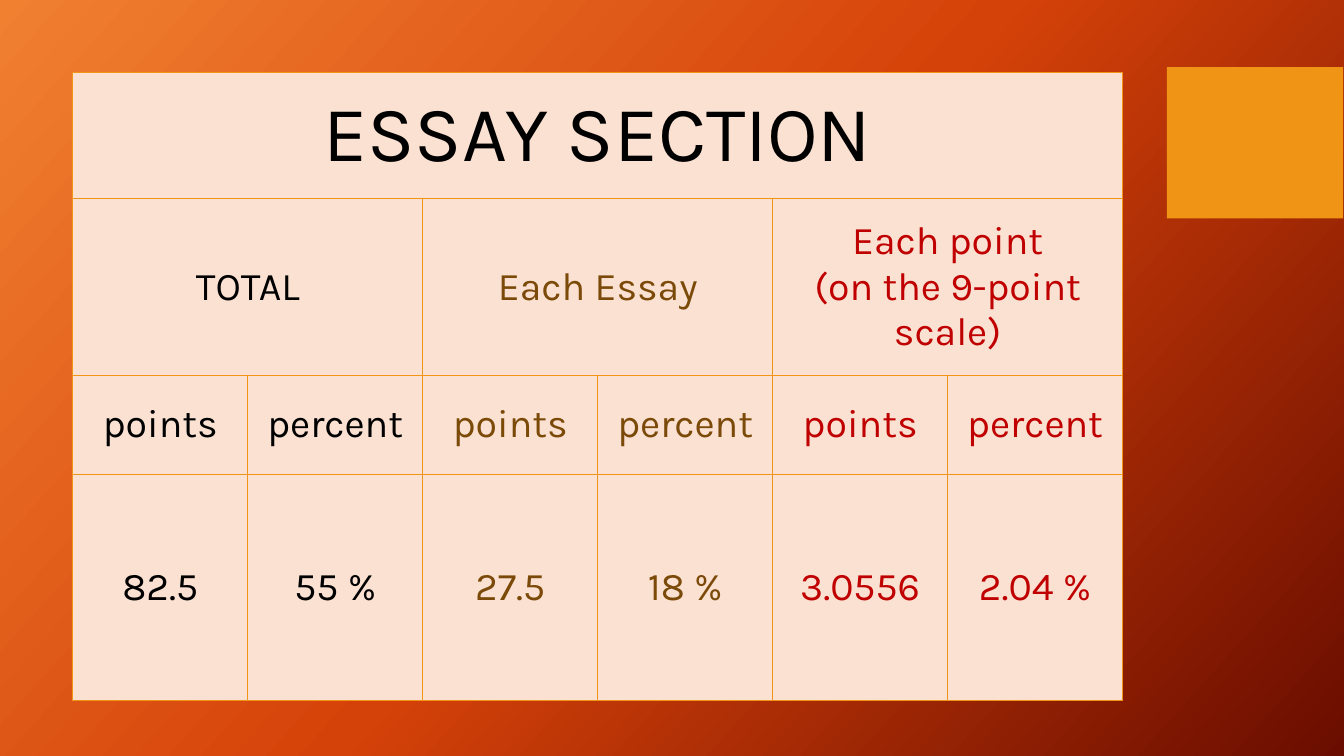
from copy import deepcopy

from lxml import etree
from pptx import Presentation
from pptx.dml.color import RGBColor
from pptx.enum import shapes, text
from pptx.oxml import ns
from pptx.util import Pt

BLACK = RGBColor(0x00, 0x00, 0x00)
BROWN = RGBColor(0x7B, 0x4A, 0x08)
RED = RGBColor(0xC0, 0x00, 0x00)
AMBER = RGBColor(0xF0, 0x94, 0x15)
CREAM = RGBColor(0xFA, 0xE1, 0xD2)
BACKGROUND_STOPS = [
    (0, RGBColor(0xF1, 0x80, 0x31)),
    (0.5, RGBColor(0xD5, 0x42, 0x09)),
    (1, RGBColor(0x6A, 0x0D, 0x00)),
]

FONT = "Karla"
ROW_HEIGHTS = [90, 126, 70.8, 161.3]
COLUMN_WIDTH = 125
GROUPS = [
    ("TOTAL", BLACK, "82.5", "55 %"),
    ("Each Essay", BROWN, "27.5", "18 %"),
    ("Each point\n(on the 9-point scale)", RED, "3.0556", "2.04 %"),
]


def paint_background(slide):
    """Fill the slide with a diagonal three-colour gradient."""
    fill = slide.background.fill
    fill.gradient()
    fill.gradient_angle = 318
    first_stop = slide.element.xpath(".//a:gs")[0]
    first_stop.addnext(deepcopy(first_stop))
    for stop, (position, color) in zip(fill.gradient_stops, BACKGROUND_STOPS):
        stop.position = position
        stop.color.rgb = color


def add_block(slide, left, top, width, height):
    """Add a plain amber rectangle."""
    shape = slide.shapes.add_shape(
        shapes.MSO_SHAPE.RECTANGLE, Pt(left), Pt(top), Pt(width), Pt(height)
    )
    shape.shadow.inherit = False
    shape.fill.solid()
    shape.fill.fore_color.rgb = AMBER
    shape.line.fill.background()


def style_cell(cell):
    """Give a cell its margins, thin amber borders and cream fill."""
    cell.margin_left = cell.margin_right = Pt(3)
    cell.margin_top = cell.margin_bottom = Pt(3)
    cell.vertical_anchor = text.MSO_ANCHOR.MIDDLE
    properties = cell._tc.get_or_add_tcPr()
    for side in ("a:lnL", "a:lnR", "a:lnT", "a:lnB"):
        line = etree.SubElement(properties, ns.qn(side), w=str(Pt(0.75)))
        solid = etree.SubElement(line, ns.qn("a:solidFill"))
        etree.SubElement(solid, ns.qn("a:srgbClr"), val=str(AMBER))
    cell.fill.solid()
    cell.fill.fore_color.rgb = CREAM


def write_cell(cell, content, color, size=28, space_after=0):
    """Write centred text into a cell."""
    paragraph = cell.text_frame.paragraphs[0]
    paragraph.text = content
    paragraph.alignment = text.PP_ALIGN.CENTER
    paragraph.space_after = Pt(space_after)
    for run in paragraph.runs:
        run.font.name = FONT
        run.font.size = Pt(size)
        run.font.color.rgb = color


def add_score_table(slide, left, top):
    """Add the essay score table, with a pair of columns for each group."""
    column_count = 2 * len(GROUPS)
    table = slide.shapes.add_table(
        len(ROW_HEIGHTS), column_count, Pt(left), Pt(top),
        Pt(COLUMN_WIDTH * column_count), Pt(sum(ROW_HEIGHTS)),
    ).table
    table.first_row = table.horz_banding = False
    for row, height in zip(table.rows, ROW_HEIGHTS):
        row.height = Pt(height)
    for cell in table.iter_cells():
        style_cell(cell)

    table.cell(0, 0).merge(table.cell(0, column_count - 1))
    write_cell(table.cell(0, 0), "ESSAY SECTION", BLACK, size=56)
    for group, (heading, color, *values) in enumerate(GROUPS):
        start = 2 * group
        table.cell(1, start).merge(table.cell(1, start + 1))
        write_cell(table.cell(1, start), heading, color)
        for offset, (unit, value) in enumerate(zip(("points", "percent"), values)):
            write_cell(table.cell(2, start + offset), unit, color)
            write_cell(table.cell(3, start + offset), value, color, space_after=6)


def main():
    """Build the slide and save it."""
    presentation = Presentation()
    presentation.slide_width = Pt(960)
    presentation.slide_height = Pt(540)
    slide = presentation.slides.add_slide(presentation.slide_layouts[6])
    paint_background(slide)
    add_block(slide, 833.5, 48, 126, 108)
    add_score_table(slide, 52, 52)
    presentation.save("out.pptx")


if __name__ == "__main__":
    main()
